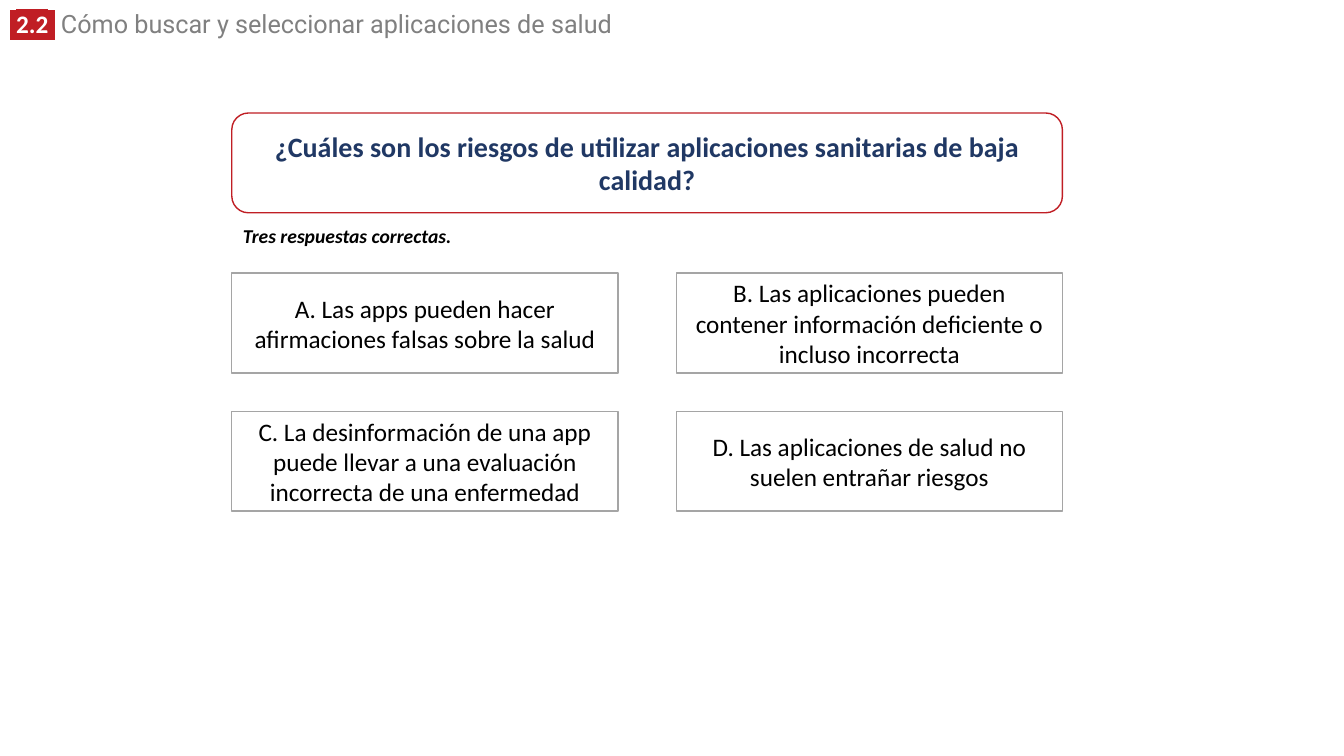
from dataclasses import dataclass

from lxml.etree import SubElement
from pptx import Presentation
from pptx.dml.color import RGBColor as RGB
from pptx.enum.shapes import MSO_SHAPE as Shape
from pptx.enum.text import MSO_ANCHOR as Anchor, MSO_AUTO_SIZE as Fit, PP_ALIGN as Align
from pptx.oxml.ns import qn
from pptx.util import Pt


@dataclass(frozen=True)
class Theme:
    red: str = "C01E24"
    navy: str = "203864"
    gray: str = "808080"
    edge: str = "A5A5A5"
    black: str = "000000"
    white: str = "FFFFFF"
    body: str = "Calibri"
    head: str = "Roboto"
    big: int = 20
    mid: int = 18
    small: int = 14


THEME = Theme()

ANSWERS = [
    "A. Las apps pueden hacer afirmaciones falsas sobre la salud",
    "B. Las aplicaciones pueden contener información deficiente o incluso incorrecta",
    "C. La desinformación de una app puede llevar a una evaluación incorrecta de una enfermedad",
    "D. Las aplicaciones de salud no suelen entrañar riesgos",
]


def add_run(para, text, size, color, face=THEME.body, bold=False, italic=False):
    run = para.add_run()
    run.text = text
    font = run.font
    font.name, font.size = face, Pt(size)
    font.bold, font.italic = bold, italic
    font.color.rgb = RGB.from_string(color)
    return run


def mark(run, color):
    """Highlight the run; the element has to follow the text fill."""
    props = run.font._element
    light = SubElement(props, qn("a:highlight"))
    SubElement(light, qn("a:srgbClr"), val=color)
    props.find(qn("a:solidFill")).addnext(light)


def add_text(slide, box, wrap):
    frame = slide.shapes.add_textbox(*map(Pt, box)).text_frame
    frame.word_wrap = wrap
    frame.auto_size = Fit.SHAPE_TO_FIT_TEXT
    return frame.paragraphs[0]


def add_panel(slide, box, kind, edge):
    """Add an outlined white shape and return its centred paragraph."""
    panel = slide.shapes.add_shape(kind, *map(Pt, box))
    panel.shadow.inherit = False
    panel.fill.solid()
    panel.fill.fore_color.rgb = RGB.from_string(THEME.white)
    panel.line.color.rgb = RGB.from_string(edge)
    panel.line.width = Pt(1)
    frame = panel.text_frame
    frame.word_wrap = True
    frame.vertical_anchor = Anchor.MIDDLE
    para = frame.paragraphs[0]
    para.alignment = Align.CENTER
    return para


def add_header(slide, box, number, title):
    para = add_text(slide, box, True)
    para.line_spacing = 0.8
    for text, face in ((" ", THEME.head), (number, THEME.body), (" ", THEME.head)):
        mark(add_run(para, text, THEME.mid, THEME.white, face, bold=True), THEME.red)
    add_run(para, " " + title, THEME.mid, THEME.gray, THEME.head)


def add_quiz(slide, box, question, hint, answers):
    """Place the question, its hint and a two-column grid of answers."""
    left, top, width, height = box
    tall, wide, row_gap = 71.3, 275.8, 27.4
    para = add_panel(slide, (left, top, width, tall), Shape.ROUNDED_RECTANGLE, THEME.red)
    add_run(para, question, THEME.big, THEME.navy, bold=True)

    para = add_text(slide, (left + 0.7, top + 75.6, 170, 24.5), False)
    add_run(para, hint, THEME.small, THEME.black, bold=True, italic=True)

    first = top + height - 2 * tall - row_gap
    for i, answer in enumerate(answers):
        row, col = divmod(i, 2)
        spot = (left + col * (width - wide), first + row * (tall + row_gap), wide, tall)
        para = add_panel(slide, spot, Shape.RECTANGLE, THEME.edge)
        add_run(para, answer, THEME.mid, THEME.black)


def main():
    deck = Presentation()
    deck.slide_width, deck.slide_height = Pt(960), Pt(540)
    slide = deck.slides.add_slide(deck.slide_layouts[6])
    add_header(slide, (0, 6.5, 685.5, 25.2), "2.2",
               "Cómo buscar y seleccionar aplicaciones de salud")
    add_quiz(slide, (165.6, 80.7, 593.3, 284.4),
             "¿Cuáles son los riesgos de utilizar aplicaciones sanitarias de baja calidad?",
             "Tres respuestas correctas.", ANSWERS)
    deck.save("out.pptx")


if __name__ == "__main__":
    main()
